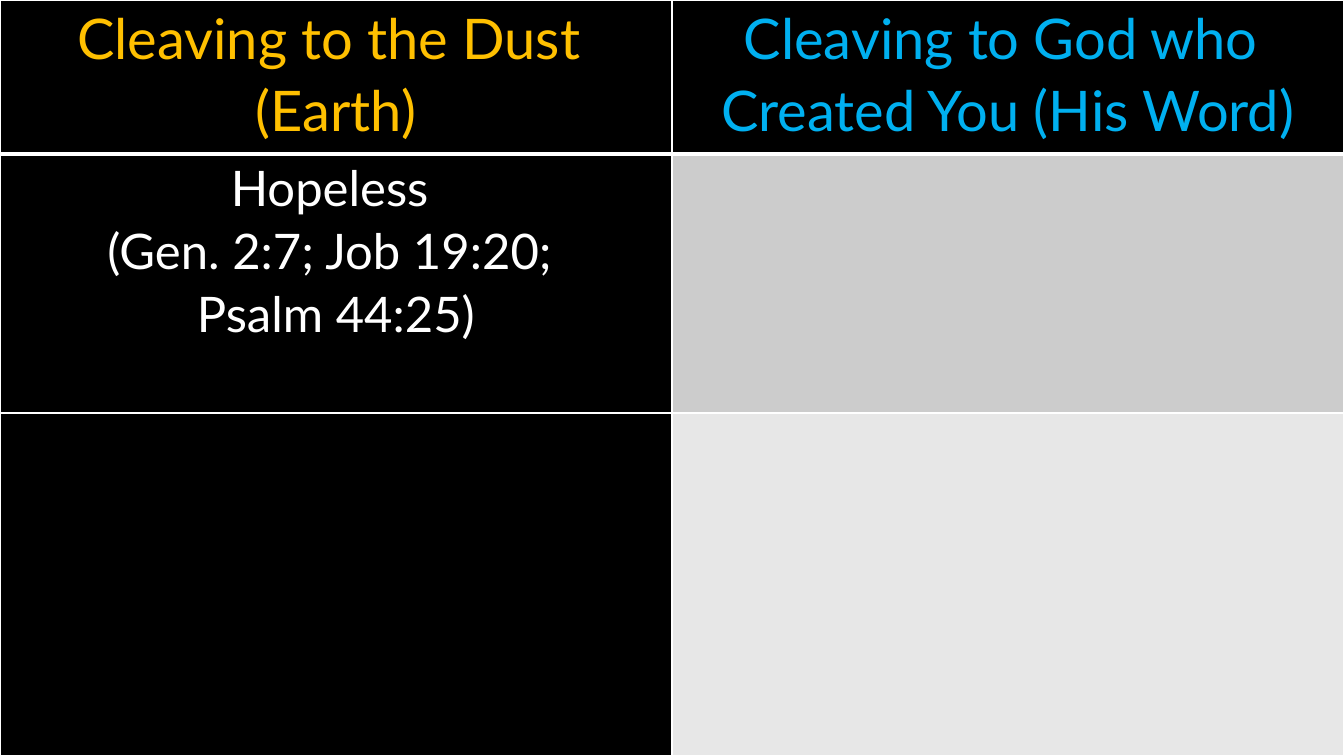
from lxml import etree
from pptx import Presentation
from pptx import util as u
from pptx.dml.color import RGBColor
from pptx.enum import text
from pptx.oxml import ns

WIDTH, HEIGHT = 1344, 756
BLACK, WHITE, GOLD, SKY = "000000", "FFFFFF", "FFC000", "00B0F0"
HEADING_RULE, THIN_RULE = 3, 1


def px(length):
    return u.Emu(round(length * 12192000 / WIDTH))


def rgb(color):
    return RGBColor.from_string(color)


def write(frame, lines, *, size, color, font, spacing):
    for index, line in enumerate(lines):
        paragraph = frame.paragraphs[0] if index == 0 else frame.add_paragraph()
        paragraph.alignment = text.PP_ALIGN.CENTER
        paragraph.line_spacing = spacing
        run = paragraph.add_run()
        run.text = line
        run.font.size = u.Pt(size)
        run.font.name = font
        run.font.bold = False
        run.font.color.rgb = rgb(color)


class Deck:
    font = "Lato"
    spacing = 1.07

    def __init__(self):
        self.show = Presentation()
        self.show.slide_width, self.show.slide_height = px(WIDTH), px(HEIGHT)
        self.slide = self.show.slides.add_slide(self.show.slide_layouts[6])

    def background(self, color):
        fill = self.slide.background.fill
        fill.solid()
        fill.fore_color.rgb = rgb(color)

    def borders(self, cell, **widths):
        properties = cell._tc.get_or_add_tcPr()
        for index, (side, width) in enumerate(widths.items()):
            line = etree.Element(ns.qn(f"a:ln{side}"), w=str(u.Pt(width)))
            paint = etree.SubElement(line, ns.qn("a:solidFill"))
            etree.SubElement(paint, ns.qn("a:srgbClr"), val=WHITE)
            properties.insert(index, line)

    def cell(self, cell, lines, fill, size, color):
        cell.margin_left = cell.margin_right = px(7)
        cell.margin_top = cell.margin_bottom = 0
        cell.fill.solid()
        cell.fill.fore_color.rgb = rgb(fill)
        write(cell.text_frame, lines, size=size, color=color,
              font=self.font, spacing=self.spacing)

    def table(self, row_heights, column_widths, contents):
        frame = self.slide.shapes.add_table(
            len(row_heights), len(column_widths), 0, 0,
            px(sum(column_widths)), px(sum(row_heights)))
        grid = frame.table
        for column, width in zip(grid.columns, column_widths):
            column.width = px(width)
        for r, height in enumerate(row_heights):
            grid.rows[r].height = px(height)
            for c, content in enumerate(contents[r]):
                cell = grid.cell(r, c)
                self.cell(cell, *content)
                self.borders(cell, L=THIN_RULE, R=THIN_RULE,
                             T=HEADING_RULE if r == 1 else THIN_RULE,
                             B=HEADING_RULE if r == 0 else THIN_RULE)


def main():
    dust_heading = ["Cleaving to the Dust ", "(Earth)"]
    god_heading = ["Cleaving to God who ", "Created You (His Word)"]
    hopeless = ["Hopeless ", "(Gen. 2:7; Job 19:20; ", "Psalm 44:25)"]

    deck = Deck()
    deck.background(BLACK)
    deck.table([154, 259, 343], [WIDTH // 2] * 2, [
        [(dust_heading, BLACK, 40, GOLD), (god_heading, BLACK, 40, SKY)],
        [(hopeless, BLACK, 35, WHITE), ([], "CCCCCC", 35, WHITE)],
        [([], BLACK, 35, WHITE), ([], "E7E7E7", 35, WHITE)],
    ])
    deck.show.save("out.pptx")


if __name__ == "__main__":
    main()
